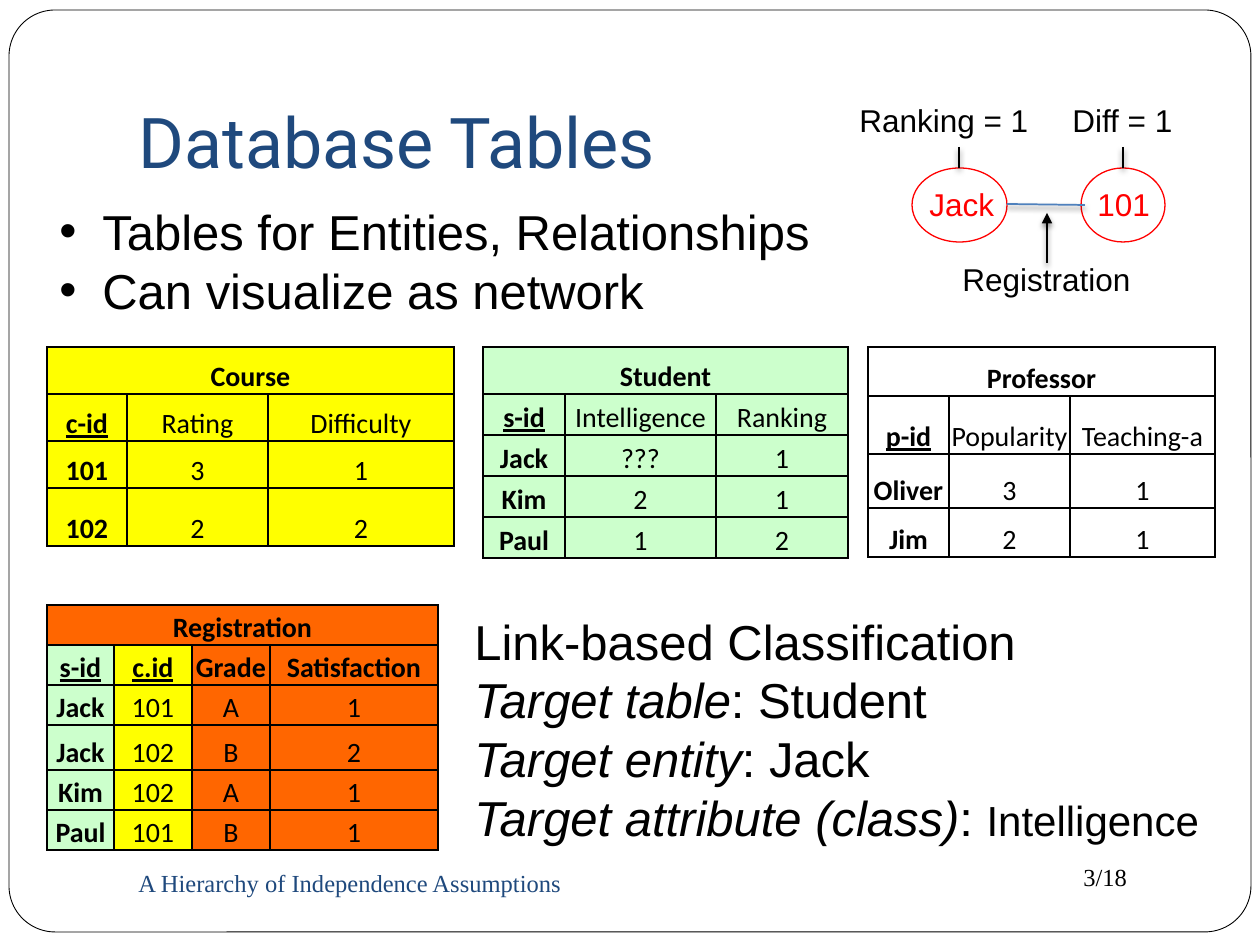
from dataclasses import dataclass

from lxml.etree import SubElement
from pptx import Presentation
from pptx.dml.color import RGBColor as Rgb
from pptx.enum.shapes import MSO_CONNECTOR as Connector, MSO_SHAPE as Preset
from pptx.enum.text import MSO_ANCHOR as Anchor, PP_ALIGN as Align
from pptx.oxml.ns import qn
from pptx.util import Pt

EMU_PER_PX = 914400 / 126


@dataclass(frozen=True)
class Theme:
    black: str = "000000"
    white: str = "FFFFFF"
    navy: str = "1F497D"
    link: str = "4F81BD"
    red: str = "FF0000"
    yellow: str = "FFFF00"
    green: str = "CCFFCC"
    orange: str = "FF6600"
    title: int = 40
    body: int = 28
    detail: int = 24
    label: int = 18
    cell: int = 16
    footer: int = 14
    sans: str = "Arial"
    heading: str = "Roboto"
    grid: str = "Calibri"
    serif: str = "Times New Roman"


THEME = Theme()


def px(*lengths):
    return [round(length * EMU_PER_PX) for length in lengths]


def apply(target, values):
    for name, value in values.items():
        setattr(target, name, value)


def add_run(paragraph, text, size, font, color=THEME.black, **values):
    run = paragraph.add_run()
    run.text = text
    apply(run.font, {"size": Pt(size), "name": font, **values})
    run.font.color.rgb = Rgb.from_string(color)


def add_text(slide, box, paragraphs, size, font, color=THEME.black, anchor=Anchor.TOP, wrap=True):
    """Each paragraph is a list of (text, format values); "\\n" is a line break."""
    shape = slide.shapes.add_textbox(*px(*box))
    frame = shape.text_frame
    apply(frame, {"word_wrap": wrap, "vertical_anchor": anchor})
    for index, runs in enumerate(paragraphs):
        paragraph = frame.add_paragraph() if index else frame.paragraphs[0]
        for text, values in runs:
            if text == "\n":
                paragraph.add_line_break()
            else:
                add_run(paragraph, text, **{"size": size, "font": font, "color": color, **values})
    return frame


def add_outline(slide, preset, box, color, width, fill=None):
    shape = slide.shapes.add_shape(preset, *px(*box))
    shape.shadow.inherit = False
    if fill:
        shape.fill.solid()
        shape.fill.fore_color.rgb = Rgb.from_string(fill)
    else:
        shape.fill.background()
    shape.line.color.rgb = Rgb.from_string(color)
    shape.line.width = Pt(width)
    return shape


def add_line(slide, start, end, color, arrow=False):
    """Draw a line with a soft shadow below it, and an arrowhead at its start if asked."""
    line = slide.shapes.add_connector(Connector.STRAIGHT, *px(*start, *end))
    line.line.color.rgb = Rgb.from_string(color)
    line.line.width = Pt(1)
    properties = line._element.spPr
    if arrow:
        SubElement(properties.find(qn("a:ln")), qn("a:headEnd"), type="triangle")
    effects = SubElement(properties, qn("a:effectLst"))
    shadow = SubElement(effects, qn("a:outerShdw"), blurRad=str(Pt(3)), dist=str(Pt(2)),
                        dir="5400000", rotWithShape="0")
    shade = SubElement(shadow, qn("a:srgbClr"), val=THEME.black)
    SubElement(shade, qn("a:alpha"), val="50000")


def format_cell(cell, text, fill, bold, underline):
    properties = cell._tc.get_or_add_tcPr()
    for side in "LRTB":
        border = SubElement(properties, qn(f"a:ln{side}"), w=str(Pt(1)))
        color = SubElement(SubElement(border, qn("a:solidFill")), qn("a:srgbClr"))
        color.set("val", THEME.black)
    cell.fill.solid()
    cell.fill.fore_color.rgb = Rgb.from_string(fill)
    margin, = px(1)
    apply(cell, {"margin_left": margin, "margin_right": margin, "margin_top": margin,
                 "margin_bottom": 0, "vertical_anchor": Anchor.BOTTOM})
    paragraph = cell.text_frame.paragraphs[0]
    apply(paragraph, {"alignment": Align.CENTER, "line_spacing": 1.15, "space_after": Pt(10)})
    if text:
        add_run(paragraph, text, THEME.cell, THEME.grid, bold=bold, underline=underline)


def add_entity_table(slide, left, top, widths, heights, title, rows, fills, keys=1, bold_header=False):
    """A merged title row, a header whose first `keys` names are underlined, then records."""
    records = [[title] + [""] * (len(widths) - 1)] + rows
    table = slide.shapes.add_table(len(heights), len(widths),
                                   *px(left, top, sum(widths), sum(heights))).table
    apply(table, {"first_row": False, "horz_banding": False})
    for column, width in zip(table.columns, px(*widths)):
        column.width = width
    for row, height in zip(table.rows, px(*heights)):
        row.height = height
    for i, record in enumerate(records):
        for j, text in enumerate(record):
            format_cell(table.cell(i, j), text,
                        fill=fills[j] if i else fills[-1],
                        bold=i == 0 or j == 0 or (i == 1 and bold_header),
                        underline=i == 1 and j < keys)
    table.cell(0, 0).merge(table.cell(0, len(widths) - 1))


def add_network(slide, left, top):
    def label(x, y, width, text, color=THEME.black):
        add_text(slide, (left + x, top + y, width, 50), [[(text, {})]],
                 THEME.label, THEME.sans, color, wrap=False)

    def line(x1, y1, x2, y2, color=THEME.black, arrow=False):
        add_line(slide, (left + x1, top + y1), (left + x2, top + y2), color, arrow)

    for name, name_x, name_width, node_x, node_width in (("101", 238, 78, 234, 84),
                                                         ("Jack", 70, 91, 65, 95)):
        label(name_x, 84, name_width, name, THEME.red)
        add_outline(slide, Preset.OVAL, (left + node_x, top + 73, node_width, 74), THEME.red, 0.75)
    line(160, 109, 238, 110, THEME.link)
    label(0, 0, 197, "Ranking = 1")
    label(213, 0, 126, "Diff = 1")
    for x in (112, 276):
        line(x, 52, x, 73)
    label(103, 159, 195, "Registration")
    line(200, 118, 200, 168, arrow=True)


def add_frame(slide, box):
    frame = add_outline(slide, Preset.ROUNDED_RECTANGLE, box, THEME.black, 0.5, THEME.white)
    frame.adjustments[0] = 0.05


def add_bullets(slide, box, lines):
    frame = add_text(slide, box, [[(line, {})] for line in lines], THEME.body, THEME.sans)
    indent, = px(43)
    for paragraph in frame.paragraphs:
        properties = paragraph._p.get_or_add_pPr()
        properties.set("marL", str(indent))
        properties.set("indent", str(-indent))
        SubElement(properties, qn("a:buFont"), typeface=THEME.sans)
        SubElement(properties, qn("a:buChar"), char="•")


def add_classification(slide, box):
    italic = {"italic": True}
    add_text(slide, box, [
        [("Link-based Classification", {}), ("\n", {}), ("Target table", italic), (": Student", {})],
        [("Target entity", italic), (": Jack", {})],
        [("Target attribute (class)", italic), (": ", {}), ("Intelligence", {"size": THEME.detail})],
    ], THEME.body, THEME.sans)


def add_tables(slide, left, top):
    add_entity_table(slide, left + 436, top, [82, 151, 132], [47, 41, 41, 41, 41], "Student",
                     [["s-id", "Intelligence", "Ranking"], ["Jack", "???", "1"],
                      ["Kim", "2", "1"], ["Paul", "1", "2"]], [THEME.green] * 3)
    add_entity_table(slide, left + 821, top, [81, 121, 145], [49, 58, 54, 49], "Professor",
                     [["p-id", "Popularity", "Teaching-a"], ["Oliver", "3", "1"],
                      ["Jim", "2", "1"]], [THEME.white] * 3)
    add_entity_table(slide, left, top, [80, 141, 186], [47, 47, 47, 58], "Course",
                     [["c-id", "Rating", "Difficulty"], ["101", "3", "1"],
                      ["102", "2", "2"]], [THEME.yellow] * 3)
    add_entity_table(slide, left, top + 258, [67, 78, 78, 168], [40, 40, 40, 45, 40, 40],
                     "Registration",
                     [["s-id", "c.id", "Grade", "Satisfaction"], ["Jack", "101", "A", "1"],
                      ["Jack", "102", "B", "2"], ["Kim", "102", "A", "1"],
                      ["Paul", "101", "B", "1"]],
                     [THEME.green, THEME.yellow, THEME.orange, THEME.orange],
                     keys=2, bold_header=True)


def main():
    presentation = Presentation()
    presentation.slide_width, presentation.slide_height = px(1260, 945)
    slide = presentation.slides.add_slide(presentation.slide_layouts[6])
    add_frame(slide, (9, 10, 1242, 922))
    add_text(slide, (1071, 856, 126, 43), [[("3/18", {})]], THEME.footer, THEME.serif)
    title = add_text(slide, (126, 38, 1071, 157), [[("Database Tables", {})]],
                     THEME.title, THEME.heading, THEME.navy, Anchor.BOTTOM)
    title.margin_bottom, = px(13)
    add_tables(slide, 47, 347)
    add_text(slide, (126, 851, 546, 63), [[("A Hierarchy of Independence Assumptions", {})]],
             THEME.footer, THEME.serif, THEME.navy, Anchor.MIDDLE)
    add_classification(slide, (462, 605, 761, 251))
    add_bullets(slide, (47, 195, 853, 131),
                ["Tables for Entities, Relationships", "Can visualize as network"])
    add_network(slide, 847, 95)
    presentation.save("out.pptx")


if __name__ == "__main__":
    main()
